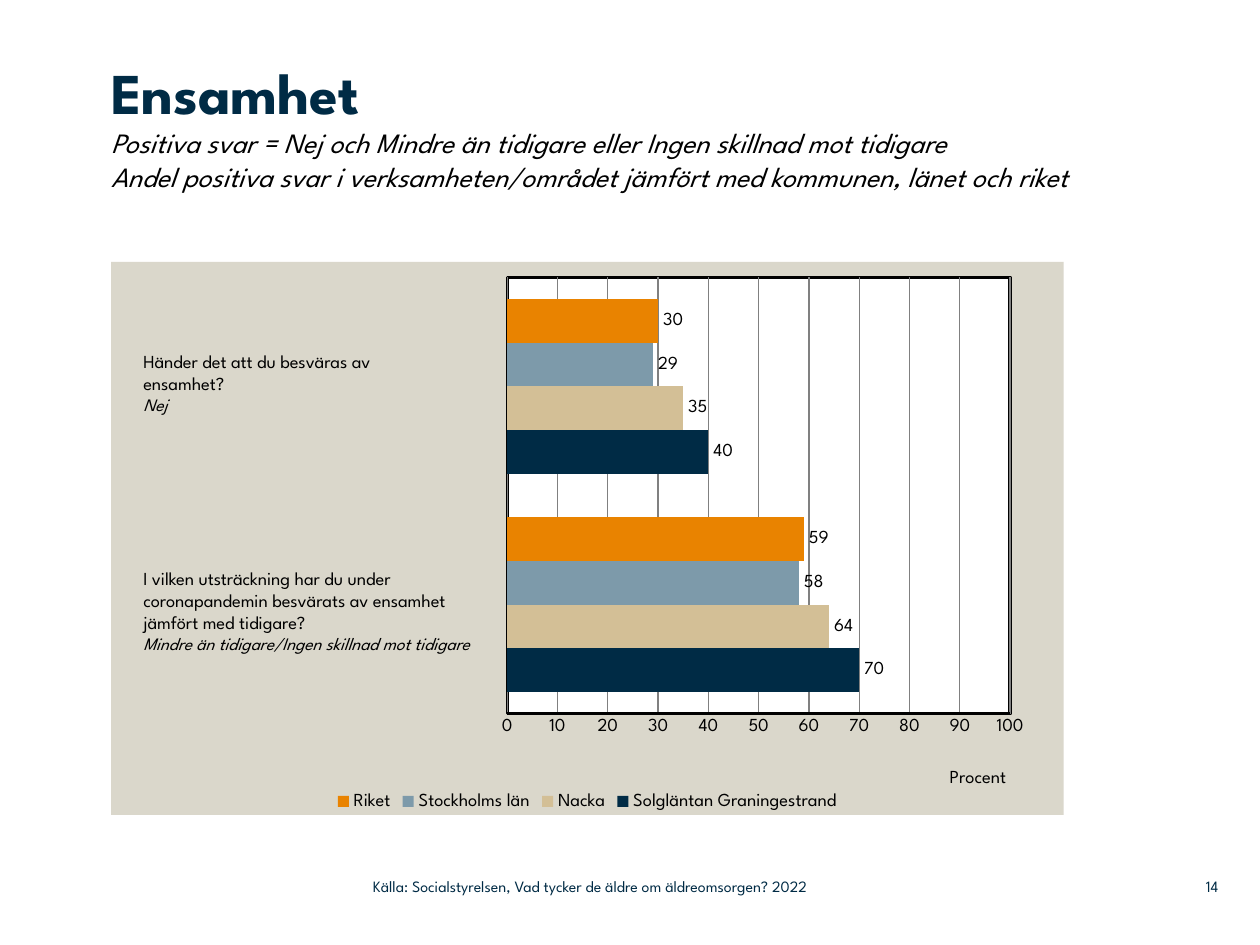
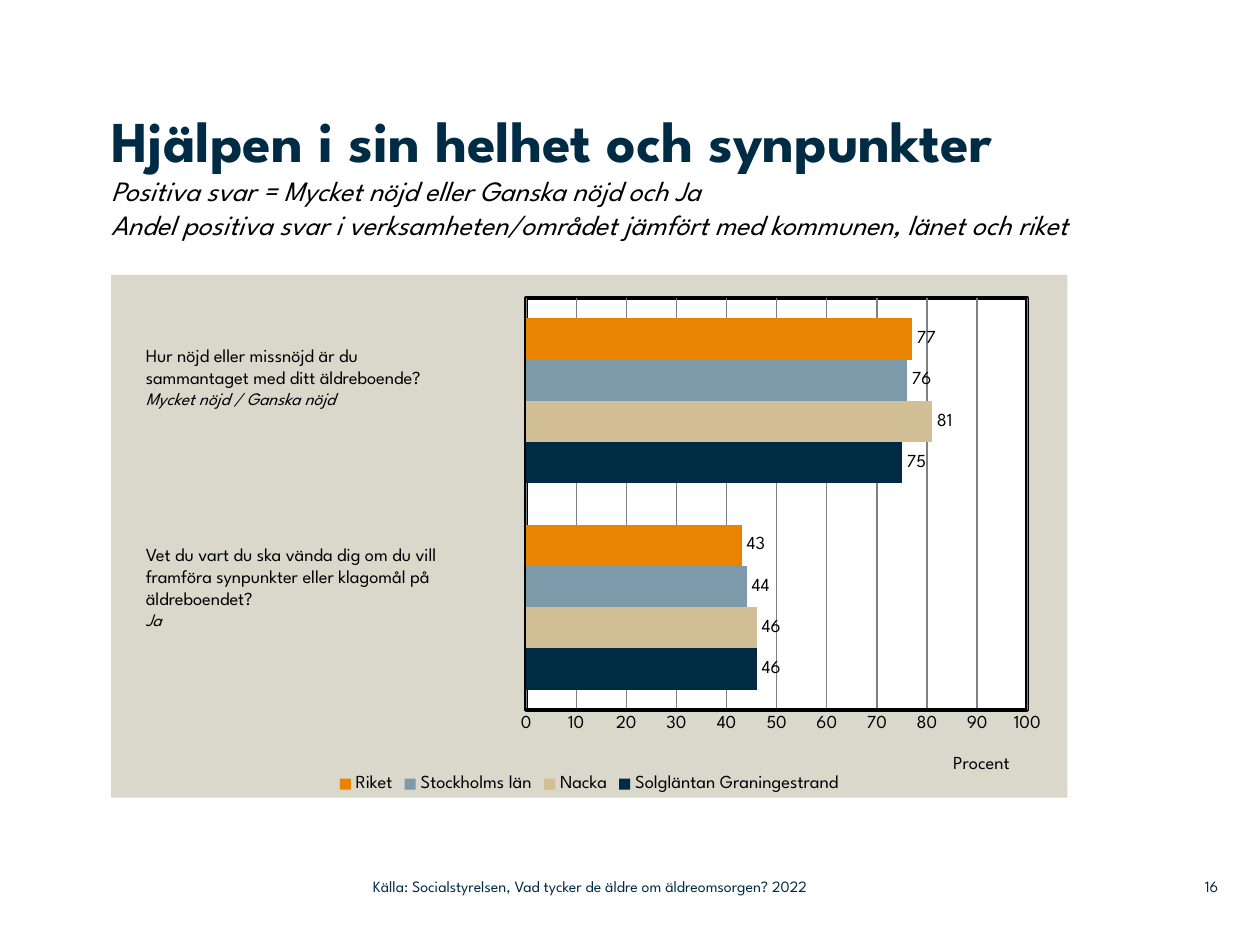
"""Build two survey slides comparing a care home with municipality, county and country."""
from lxml import etree
from pptx import Presentation
from pptx import util as u
from pptx.chart import data as cd
from pptx.dml.color import RGBColor
from pptx.enum import chart as ch, text
from pptx.oxml import parse_xml
from pptx.oxml.ns import nsdecls, qn

FONT = "League Spartan"
NAVY = RGBColor(0x00, 0x2B, 0x45)
SAND = RGBColor(0xD3, 0xBF, 0x96)
STEEL = RGBColor(0x7D, 0x9A, 0xAA)
ORANGE = RGBColor(0xE9, 0x83, 0x00)
PANEL = RGBColor(0xDA, 0xD7, 0xCB)
GRID = RGBColor(0x80, 0x80, 0x80)
BLACK = RGBColor(0x00, 0x00, 0x00)
WHITE = RGBColor(0xFF, 0xFF, 0xFF)

SERIES = [("Solgläntan Graningestrand", NAVY), ("Nacka", SAND),
          ("Stockholms län", STEEL), ("Riket", ORANGE)]
COMPARISON = "Andel positiva svar i verksamheten/området jämfört med kommunen, länet och riket"
SOURCE = "Källa: Socialstyrelsen, Vad tycker de äldre om äldreomsorgen? 2022"

SLIDES = [
    dict(title="Ensamhet", number="14",
         positive="Positiva svar = Nej och Mindre än tidigare eller Ingen skillnad mot tidigare",
         title_box=(2.24, 1.14, 19.84, 4.17), chart_box=(2.24, 5.28, 19.2, 11.15),
         plot=dict(x=0.416, y=0.028, w=0.528, h=0.789),
         values=[(70, 40), (64, 35), (58, 29), (59, 30)],
         questions=[
             ((2.64, 6.93, 7.47, 1.6),
              ["Händer det att du besväras av", "ensamhet?"], "Nej"),
             ((2.64, 11.3, 7.47, 2.46),
              ["I vilken utsträckning har du under coronapandemin besvärats "
               "av ensamhet jämfört med tidigare?"],
              "Mindre än tidigare/Ingen skillnad mot tidigare")]),
    dict(title="Hjälpen i sin helhet och synpunkter", number="16",
         positive="Positiva svar = Mycket nöjd eller Ganska nöjd och Ja",
         title_box=(2.24, 2.11, 19.79, 3.4), chart_box=(2.24, 5.54, 19.28, 10.54),
         plot=dict(x=0.434, y=0.044, w=0.524, h=0.789),
         values=[(46, 75), (46, 81), (44, 76), (43, 77)],
         questions=[
             ((2.69, 6.81, 7.87, 2.06),
              ["Hur nöjd eller missnöjd är du", "sammantaget med ditt äldreboende?"],
              "Mycket nöjd / Ganska nöjd"),
             ((2.69, 10.82, 7.75, 2.06),
              ["Vet du vart du ska vända dig om du vill framföra synpunkter "
               "eller klagomål på äldreboendet?"], "Ja")]),
]


def add_text(tf, content, size=10.5, color=BLACK, bold=False, italic=False,
             align=text.PP_ALIGN.LEFT):
    p = tf.add_paragraph() if tf.text else tf.paragraphs[0]
    p.alignment = align
    r = p.add_run()
    r.text = content
    f = r.font
    f.name, f.size, f.bold, f.italic = FONT, u.Pt(size), bold, italic
    f.color.rgb = color


def set_layout(parent, target=None, **place):
    layout = parent.find(qn("c:layout"))
    if layout is None:
        layout = parse_xml(f"<c:layout {nsdecls('c')}/>")
        parent.insert(0, layout)
    manual = etree.SubElement(layout, qn("c:manualLayout"))
    settings = {"layoutTarget": target, "xMode": "edge", "yMode": "edge", **place}
    for name, value in settings.items():
        if value is not None:
            etree.SubElement(manual, qn(f"c:{name}")).set("val", str(value))


prs = Presentation()
prs.slide_width, prs.slide_height = u.Cm(25.4), u.Cm(19.05)

for page in SLIDES:
    s = prs.slides.add_slide(prs.slide_layouts[5])

    title = s.shapes.title
    title.left, title.top, title.width, title.height = map(u.Cm, page["title_box"])
    tf = title.text_frame
    tf.margin_left = tf.margin_right = tf.margin_top = tf.margin_bottom = 0
    tf.vertical_anchor = text.MSO_ANCHOR.TOP
    tf.auto_size = text.MSO_AUTO_SIZE.NONE
    tf.word_wrap = True
    add_text(tf, page["title"], size=33, color=NAVY, bold=True)
    for line in (page["positive"], COMPARISON):
        add_text(tf, line, size=16, italic=True)

    chart_data = cd.CategoryChartData()
    chart_data.categories = ["1", "2"]
    for (name, color), values in zip(SERIES, page["values"]):
        chart_data.add_series(name, values)
    chart = s.shapes.add_chart(ch.XL_CHART_TYPE.BAR_CLUSTERED,
                               *map(u.Cm, page["chart_box"]), chart_data).chart
    chart.font.name, chart.font.size = FONT, u.Pt(10.5)
    chart.font.color.rgb = BLACK
    chart.has_title = False
    chart.has_legend = True
    chart.legend.position = ch.XL_LEGEND_POSITION.BOTTOM
    chart.legend.include_in_layout = False

    plot = chart.plots[0]
    plot.gap_width, plot.overlap, plot.vary_by_categories = 100, 0, False
    plot.has_data_labels = True
    plot.data_labels.show_value = True
    plot.data_labels.position = ch.XL_LABEL_POSITION.OUTSIDE_END
    for ser, (name, color) in zip(plot.series, SERIES):
        ser.format.fill.solid()
        ser.format.fill.fore_color.rgb = color

    chart.category_axis.visible = False
    axis = chart.value_axis
    axis.minimum_scale, axis.maximum_scale, axis.major_unit = 0, 100, 10
    axis.major_tick_mark = axis.minor_tick_mark = ch.XL_TICK_MARK.NONE
    axis.format.line.color.rgb = BLACK
    axis.format.line.width = u.Pt(2)
    axis.has_major_gridlines = True
    axis.major_gridlines.format.line.color.rgb = GRID
    axis.major_gridlines.format.line.width = u.Pt(0.75)
    add_text(axis.axis_title.text_frame, "Procent")
    set_layout(axis.axis_title._element, x=0.877, y=0.91)

    space = chart._chartSpace
    plot_area = space.chart.plotArea
    set_layout(plot_area, target="inner", **page["plot"])
    panel, frame = [
        parse_xml(f'<c:spPr {nsdecls("c", "a")}><a:solidFill><a:srgbClr val="{fill}"/></a:solidFill>'
                  f'<a:ln w="{u.Pt(2)}">{line}</a:ln></c:spPr>')
        for fill, line in ((PANEL, "<a:noFill/>"),
                           (WHITE, f'<a:solidFill><a:srgbClr val="{BLACK}"/></a:solidFill>'))]
    space.chart.addnext(panel)
    plot_area.append(frame)

    for box, question, answer in page["questions"]:
        tf = s.shapes.add_textbox(*map(u.Cm, box)).text_frame
        tf.word_wrap = True
        for line in question:
            add_text(tf, line)
        add_text(tf, answer, size=10, italic=True)

    for left, width, content, align in (
            (7.52, 11.25, SOURCE, text.PP_ALIGN.LEFT),
            (23.37, 1.19, page["number"], text.PP_ALIGN.RIGHT)):
        tf = s.shapes.add_textbox(u.Cm(left), u.Cm(17.5), u.Cm(width), u.Cm(0.74)).text_frame
        tf.margin_left = tf.margin_right = tf.margin_top = tf.margin_bottom = 0
        tf.vertical_anchor = text.MSO_ANCHOR.MIDDLE
        tf.word_wrap = True
        add_text(tf, content, size=9, color=NAVY, align=align)

prs.save("out.pptx")
